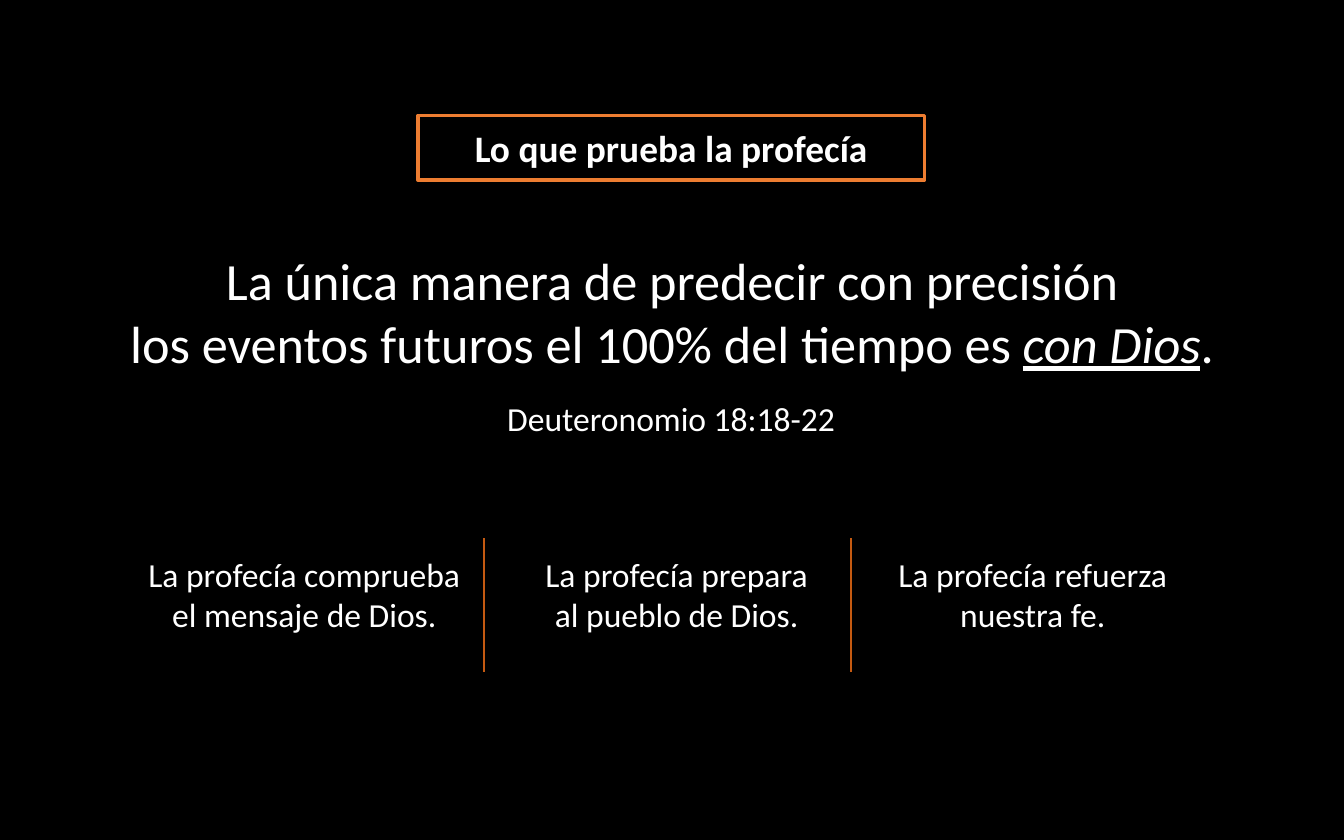
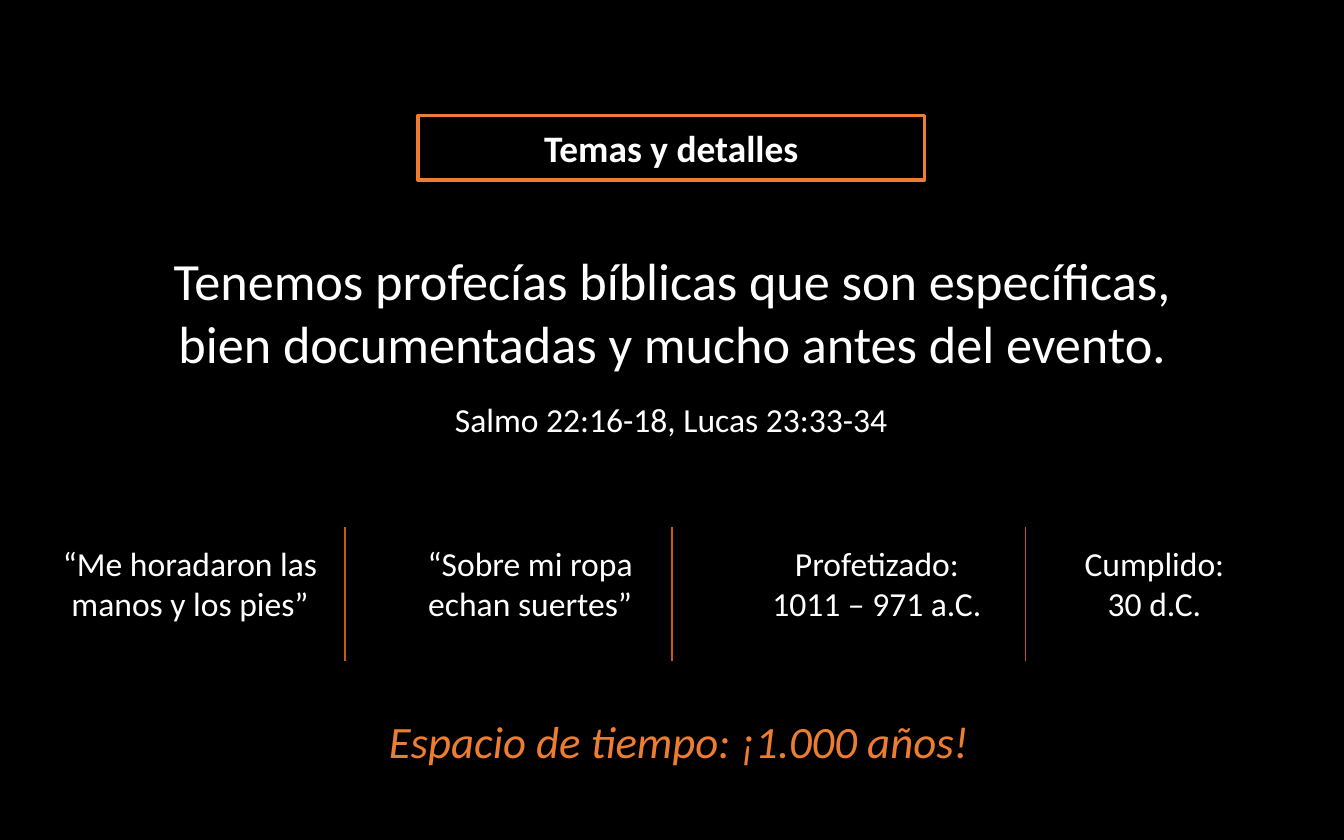
"""Build two dark slides on biblical prophecy, each with a pill title and divided columns."""
from lxml import etree
from pptx import Presentation, oxml
from pptx.dml.color import RGBColor
from pptx.enum import shapes, text
from pptx.oxml.ns import nsdecls, qn
from pptx.util import Inches, Pt

HUES = {"back": "000000", "ink": "FFFFFF", "pill": "ED7D31", "rule": "C55A11"}
FONT = "Calibri"
PILL = (
    f'<a:prstGeom {nsdecls("a")} prst="roundRect"><a:avLst>'
    '<a:gd name="adj" fmla="val 50000"/></a:avLst></a:prstGeom>'
)


def hue(name):
    return RGBColor.from_string(HUES[name])


def write(shape, *paras, size=18, color="ink", bold=False, italic=False,
          anchor=text.MSO_ANCHOR.TOP, fit=text.MSO_AUTO_SIZE.SHAPE_TO_FIT_TEXT):
    """Fill a shape; underscores mark stressed words and newlines break lines."""
    frame = shape.text_frame
    frame.word_wrap = True
    frame.auto_size = fit
    frame.vertical_anchor = anchor
    for i, words in enumerate(paras):
        para = frame.add_paragraph() if i else frame.paragraphs[0]
        para.alignment = text.PP_ALIGN.CENTER
        for j, part in enumerate(words.split("_")):
            for k, line in enumerate(part.split("\n")):
                if k:
                    para.add_line_break()
                run = para.add_run()
                run.text = line
                font = run.font
                font.name, font.size, font.bold = FONT, Pt(size), bold
                font.color.rgb = hue(color)
                font.italic = italic or j % 2 == 1
                font.underline = j % 2 == 1


pages = [
    dict(
        title="Lo que prueba la profecía",
        claim="La única manera de predecir con precisión\n"
              "los eventos futuros el 100% del tiempo es _con Dios_.",
        verse="Deuteronomio 18:18-22", verse_top=2.91,
        top=4.0, rules=[3.6, 6.33],
        cols=[(0.93, 2.67, ["La profecía comprueba\nel mensaje de Dios."]),
              (3.88, 2.31, ["La profecía prepara al pueblo de Dios."]),
              (6.53, 2.31, ["La profecía refuerza nuestra fe."])],
    ),
    dict(
        title="Temas y detalles",
        claim="Tenemos profecías bíblicas que son específicas,\n"
              "bien documentadas y mucho antes del evento.",
        verse="Salmo 22:16-18, Lucas 23:33-34", verse_top=2.92,
        top=3.92, rules=[2.57, 5.0, 7.63],
        cols=[(0.26, 2.31, ["“Me horadaron las manos y los pies”"]),
              (2.89, 2.11, ["“Sobre mi ropa echan suertes”"]),
              (5.42, 2.21, ["Profetizado:", "1011 – 971 a.C."]),
              (7.63, 1.92, ["Cumplido:", "30 d.C."])],
        close="Espacio de tiempo: ¡1.000 años!",
    ),
]

deck = Presentation()
deck.slide_width, deck.slide_height = Inches(10), Inches(6.25)

for page in pages:
    slide = deck.slides.add_slide(deck.slide_layouts[5])
    fill = slide.background.fill
    fill.solid()
    fill.fore_color.rgb = hue("back")
    box = slide.shapes.add_textbox

    title = slide.shapes.title
    title.left, title.top = Inches(3.11), Inches(0.86)
    title.width, title.height = Inches(3.77), Inches(0.48)
    title._element.spPr.append(oxml.parse_xml(PILL))
    title.fill.background()
    title.line.color.rgb = hue("pill")
    title.line.width = Pt(1.75)
    write(title, page["title"], size=20, bold=True,
          anchor=text.MSO_ANCHOR.MIDDLE, fit=text.MSO_AUTO_SIZE.NONE)

    claim = box(Inches(0.66), Inches(1.8), Inches(8.68), Inches(1.04))
    write(claim, page["claim"], size=28)
    verse = box(Inches(3.17), Inches(page["verse_top"]), Inches(3.65), Inches(0.4))
    write(verse, page["verse"])

    top = page["top"]
    for left, width, paras in page["cols"]:
        col = box(Inches(left), Inches(top + 0.07), Inches(width), Inches(0.71))
        write(col, *paras)
    for x in page["rules"]:
        rule = slide.shapes.add_connector(
            shapes.MSO_CONNECTOR.STRAIGHT,
            Inches(x), Inches(top + 1), Inches(x), Inches(top))
        rule.line.color.rgb = hue("rule")
        rule.line.width = Pt(1)
        etree.SubElement(rule._element.spPr, qn("a:effectLst"))

    if "close" in page:
        close = box(Inches(2.57), Inches(5.26), Inches(4.96), Inches(0.5))
        write(close, page["close"], size=24, color="pill", italic=True)

deck.save("out.pptx")
